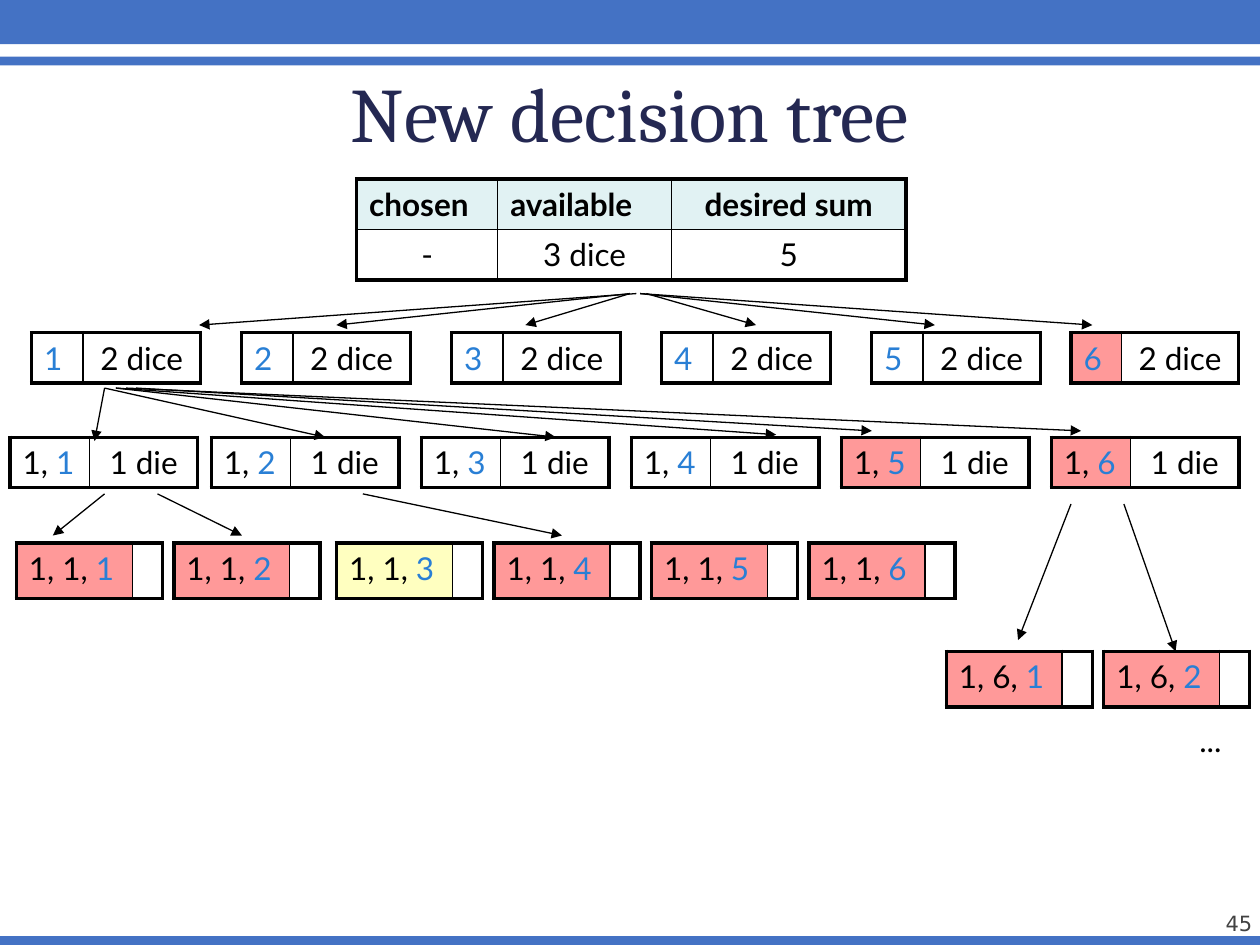
from lxml.etree import SubElement
from pptx import Presentation
from pptx.dml.color import RGBColor
from pptx.enum.shapes import MSO_CONNECTOR, MSO_SHAPE
from pptx.enum.text import MSO_ANCHOR, PP_ALIGN
from pptx.oxml.ns import qn
from pptx.util import Inches, Pt

BLACK, BLUE, BAR = "000000", "297FD5", "4472C4"
RED, YELLOW, MINT = "FF9999", "FFFFC0", "E1F2F3"
THICK, THIN = 2.25, 1
LEFT, CENTER, RIGHT = PP_ALIGN.LEFT, PP_ALIGN.CENTER, PP_ALIGN.RIGHT
STEP, LEAF_STEP = 10 / 6, 1.25

BARS = [(0, -0.03, 0.38), (-0.02, 0.45, 0.07), (-0.02, 7.43, 0.07)]
ROOT = [["chosen", "available", "desired sum"], ["-", "3 dice", "5"]]

LEVELS = [
    dict(top=2.64, height=0.4, cols=(0.41, 0.93), rest="2 dice", nodes=[
        *[(0.25 + STEP * i, "", str(i + 1), None) for i in range(5)]]),
    dict(top=2.64, height=0.4, cols=(0.4, 0.93), rest="2 dice", nodes=[
        (8.5, "", "6", RED)]),
    dict(top=3.47, height=0.4, cols=(0.63, 0.86), rest="1 die", nodes=[
        (0.08, "1, ", "1", None),
        *[(0.01 + STEP * i, "1, ", str(i + 1), RED if i > 3 else None)
          for i in range(1, 6)]]),
    dict(top=4.31, height=0.44, cols=(0.92, 0.23), rest="", nodes=[
        *[(0.13 + LEAF_STEP * i, "1, 1, ", str(i + 1), RED) for i in range(2)],
        *[(0.17 + LEAF_STEP * i, "1, 1, ", str(i + 1), YELLOW if i == 2 else RED)
          for i in range(2, 6)]]),
    dict(top=5.17, height=0.44, cols=(0.92, 0.23), rest="", nodes=[
        *[(7.51 + LEAF_STEP * i, "1, 6, ", str(i + 1), RED) for i in range(2)]]),
]

ARROWS = [
    (2.33, [(5.05, 1.58, 2.58), (5, 2.67, 2.58), (5, 4.17, 2.58),
            (5.13, 6, 2.58), (5.08, 7.42, 2.58), (5.08, 8.67, 2.58)]),
    (3.08, [(0.83, 0.75, 3.5), (0.83, 2.58, 3.47), (0.92, 4.41, 3.47),
            (0.92, 6.16, 3.45), (1.08, 6.92, 3.42), (1, 8.58, 3.42)]),
    (3.92, [(0.83, 0.42, 4.25), (1.25, 1.92, 4.25), (2.88, 4.46, 4.25)]),
    (4, [(8.5, 8.08, 5.08), (8.92, 9.33, 5.17)]),
]


def rgb(color):
    return RGBColor.from_string(color)


def write(p, parts, size=18, font="Lato", bold=False, align=LEFT):
    p.alignment = align
    for text, color in parts:
        r = p.add_run()
        r.text = text
        r.font.size, r.font.name, r.font.bold = Pt(size), font, bold
        r.font.color.rgb = rgb(color)


def add_text(s, box, parts, insets=None, anchor=MSO_ANCHOR.TOP, wrap=True, **style):
    tf = s.shapes.add_textbox(*map(Inches, box)).text_frame
    tf.word_wrap, tf.vertical_anchor = wrap, anchor
    if insets:
        (tf.margin_left, tf.margin_top,
         tf.margin_right, tf.margin_bottom) = map(Inches, insets)
    write(tf.paragraphs[0], parts, **style)


def set_borders(cell, widths):
    tcPr = cell._tc.get_or_add_tcPr()
    for side, width in zip("LRTB", widths):
        ln = SubElement(tcPr, qn(f"a:ln{side}"), w=str(Pt(width)))
        SubElement(SubElement(ln, qn("a:solidFill")), qn("a:srgbClr"), val=BLACK)


def add_grid(s, left, top, cols, height, rows):
    shape = s.shapes.add_table(len(rows), len(cols), Inches(left), Inches(top),
                               Inches(sum(cols)), Inches(height * len(rows)))
    table = shape.table
    table.first_row = table.horz_banding = False
    for col, width in zip(table.columns, cols):
        col.width = Inches(width)
    last_row, last_col = len(rows) - 1, len(cols) - 1
    for i, row in enumerate(rows):
        for j, (parts, fill, style) in enumerate(row):
            cell = table.cell(i, j)
            outer = (j == 0, j == last_col, i == 0, i == last_row)
            set_borders(cell, [THICK if edge else THIN for edge in outer])
            if fill:
                cell.fill.solid()
                cell.fill.fore_color.rgb = rgb(fill)
            else:
                cell.fill.background()
            write(cell.text_frame.paragraphs[0], parts, **style)


def add_node(s, level, left, prefix, choice, fill):
    chosen = [(t, c) for t, c in ((prefix, BLACK), (choice, BLUE)) if t]
    rest = [(level["rest"], BLACK)] if level["rest"] else []
    row = [(chosen, fill, {}), (rest, None, dict(align=CENTER))]
    add_grid(s, left, level["top"], level["cols"], level["height"], [row])


def add_arrow(s, x1, y1, x2, y2):
    line = s.shapes.add_connector(MSO_CONNECTOR.STRAIGHT,
                                  *map(Inches, (x1, y1, x2, y2)))
    line.line.width = Pt(0.75)
    line.line.color.rgb = rgb(BLACK)
    SubElement(line.line._get_or_add_ln(), qn("a:tailEnd"), type="triangle")
    SubElement(line._element.spPr, qn("a:effectLst"))


def main():
    prs = Presentation()
    prs.slide_width, prs.slide_height = Inches(10), Inches(7.5)
    s = prs.slides.add_slide(prs.slide_layouts[6])

    for left, top, height in BARS:
        sp = s.shapes.add_shape(MSO_SHAPE.RECTANGLE,
                                *map(Inches, (left, top, 10.02, height)))
        sp.shadow.inherit = False
        sp.fill.solid()
        sp.fill.fore_color.rgb = rgb(BAR)
        sp.line.fill.background()

    add_text(s, (9.11, 7.03, 0.83, 0.4), [("45", "424242")], (0, 0, 0, 0),
             MSO_ANCHOR.BOTTOM, size=12, font="DejaVu Sans", align=RIGHT)
    add_text(s, (0.5, 0.48, 9, 0.77), [("New decision tree", "242852")],
             (0, 0.05, 0, 0), MSO_ANCHOR.BOTTOM, size=44, font="Cambria", align=CENTER)

    rows = [[([(text, BLACK)], None if i else MINT,
              dict(bold=i == 0, align=CENTER if i or j == 2 else LEFT))
             for j, text in enumerate(row)] for i, row in enumerate(ROOT)]
    add_grid(s, 2.83, 1.42, (1.12, 1.38, 1.86), 0.4, rows)

    for level in LEVELS:
        for node in level["nodes"]:
            add_node(s, level, *node)
    for y1, ends in ARROWS:
        for x1, x2, y2 in ends:
            add_arrow(s, x1, y1, x2, y2)
    add_text(s, (9.42, 5.67, 0.43, 0.4), [("...", BLACK)], wrap=False)

    prs.save("out.pptx")


if __name__ == "__main__":
    main()
